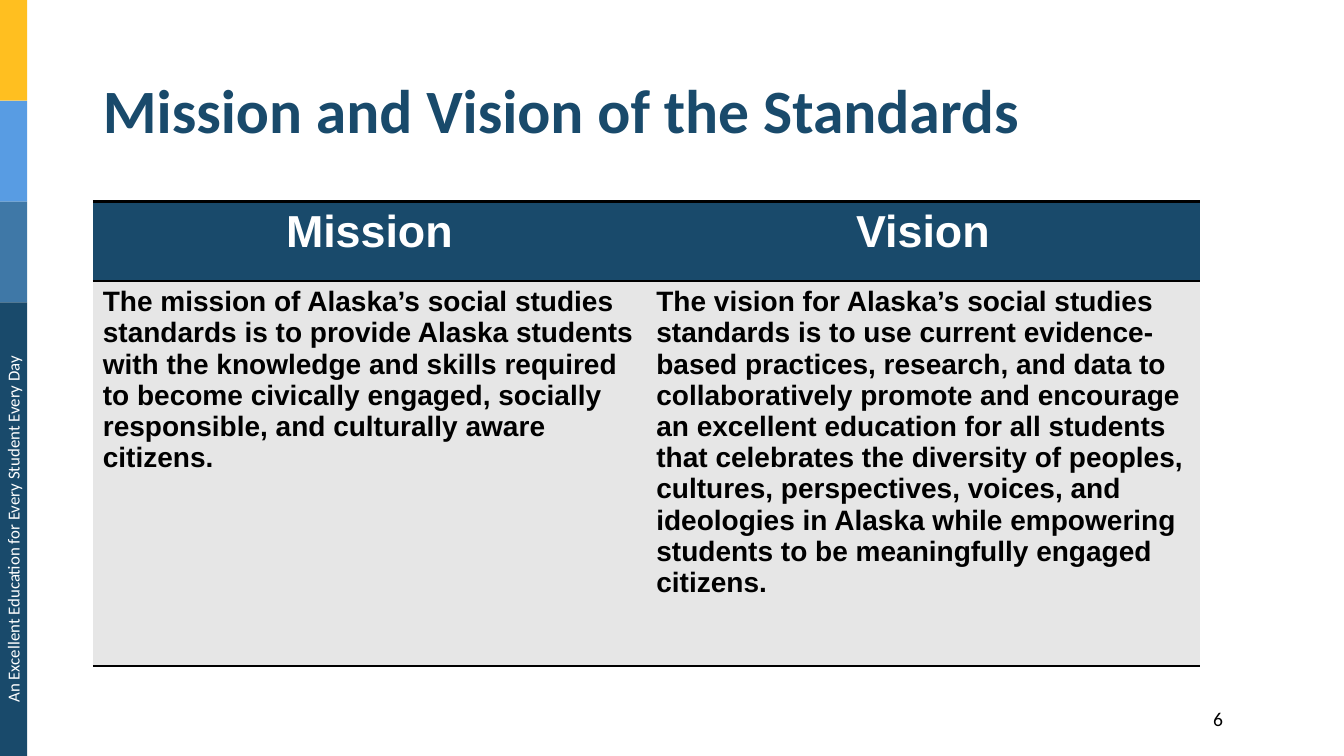
import pptx
import pptx.util
import pptx.dml.color
import pptx.enum.shapes
import pptx.enum.text
import pptx.oxml.ns
import lxml.etree

Inches = pptx.util.Inches
RGBColor = pptx.dml.color.RGBColor
ALIGN = pptx.enum.text.PP_ALIGN
ANCHOR = pptx.enum.text.MSO_ANCHOR

NAVY = RGBColor(0x19, 0x4A, 0x6B)
STEEL = RGBColor(0x3F, 0x78, 0xA7)
SKY = RGBColor(0x58, 0x9C, 0xE3)
GOLD = RGBColor(0xFF, 0xBF, 0x20)
GREY = RGBColor(0xE6, 0xE6, 0xE6)
BLACK = RGBColor(0, 0, 0)
WHITE = RGBColor(0xFF, 0xFF, 0xFF)

STATEMENTS = {
    "Mission": "The mission of Alaska’s social studies standards is to provide "
               "Alaska students with the knowledge and skills required to become "
               "civically engaged, socially responsible, and culturally aware citizens.",
    "Vision": "The vision for Alaska’s social studies standards is to use current "
              "evidence‐based practices, research, and data to collaboratively promote "
              "and encourage an excellent education for all students that celebrates "
              "the diversity of peoples, cultures, perspectives, voices, and ideologies "
              "in Alaska while empowering students to be meaningfully engaged citizens.",
}


def write_text(frame, text, font_name, size, color, bold=False, align=ALIGN.LEFT):
    frame.text = text
    frame.word_wrap = True
    para = frame.paragraphs[0]
    para.alignment = align
    font = para.runs[0].font
    font.name = font_name
    font.size = pptx.util.Pt(size)
    font.bold = bold
    font.color.rgb = color


def add_label(page, left, top, width, height, text, size, color, align, rotation=0):
    box = page.shapes.add_textbox(Inches(left), Inches(top), Inches(width), Inches(height))
    box.rotation = rotation
    write_text(box.text_frame, text, "Calibri", size, color, align=align)


def add_side_bar(page):
    top = 0
    for height, color in [(1, GOLD), (1, SKY), (1, STEEL), (4.5, NAVY)]:
        band = page.shapes.add_shape(
            pptx.enum.shapes.MSO_SHAPE.RECTANGLE,
            Inches(0), Inches(top), Inches(0.27), Inches(height))
        band.shadow.inherit = False
        band.fill.solid()
        band.fill.fore_color.rgb = color
        band.line.fill.background()
        top += height


def set_title(page, text):
    title = page.shapes.title
    title.left, title.top = Inches(0.92), Inches(0.4)
    title.width, title.height = Inches(11.5), Inches(1.45)
    frame = title.text_frame
    write_text(frame, text, "Calibri", 44, NAVY, bold=True)
    frame.auto_size = pptx.enum.text.MSO_AUTO_SIZE.NONE
    frame.vertical_anchor = ANCHOR.MIDDLE
    frame.paragraphs[0].line_spacing = 0.9


def set_borders(cell):
    qn = pptx.oxml.ns.qn
    properties = cell._tc.get_or_add_tcPr()
    for side in ("lnL", "lnR", "lnT", "lnB"):
        border = lxml.etree.SubElement(properties, qn("a:" + side))
        if side in ("lnL", "lnR"):
            lxml.etree.SubElement(border, qn("a:noFill"))
        else:
            border.set("w", str(pptx.util.Pt(2)))
            fill = lxml.etree.SubElement(border, qn("a:solidFill"))
            lxml.etree.SubElement(fill, qn("a:srgbClr"), val=str(BLACK))


def fill_cell(cell, text, size, color, background, align):
    set_borders(cell)
    cell.fill.solid()
    cell.fill.fore_color.rgb = background
    cell.vertical_anchor = ANCHOR.TOP
    write_text(cell.text_frame, text, "Arial", size, color, bold=True, align=align)


def add_statement_table(page):
    table = page.shapes.add_table(
        2, len(STATEMENTS), Inches(0.92), Inches(2), Inches(10.98), Inches(4.61)).table
    table.rows[0].height = Inches(0.79)
    table.rows[1].height = Inches(3.82)
    for index, (heading, statement) in enumerate(STATEMENTS.items()):
        table.columns[index].width = Inches(5.49)
        fill_cell(table.cell(0, index), heading, 32, WHITE, NAVY, ALIGN.CENTER)
        fill_cell(table.cell(1, index), statement, 20, BLACK, GREY, ALIGN.LEFT)


def main():
    deck = pptx.Presentation()
    deck.slide_width, deck.slide_height = Inches(13.33), Inches(7.5)
    page = deck.slides.add_slide(deck.slide_layouts.get_by_name("Title Only"))
    add_label(page, 11.38, 6.96, 0.85, 0.34, "6", 14, BLACK, ALIGN.RIGHT)
    add_side_bar(page)
    add_label(page, -2.12, 5.1, 4.5, 0.3,
              "An Excellent Education for Every Student Every Day",
              12, WHITE, ALIGN.CENTER, rotation=270)
    set_title(page, "Mission and Vision of the Standards")
    add_statement_table(page)
    deck.save("out.pptx")


if __name__ == "__main__":
    main()
